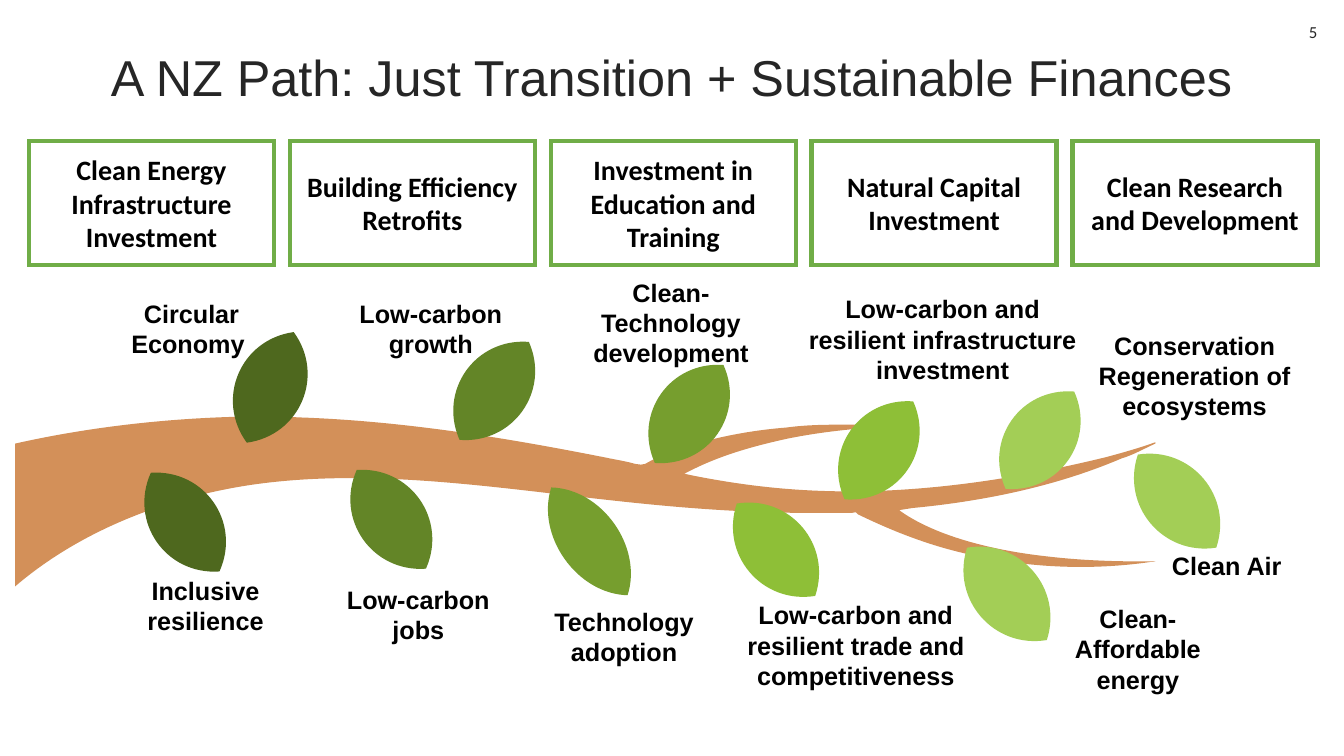
from math import hypot

from lxml import etree
from pptx import Presentation
from pptx.dml.color import RGBColor
from pptx.enum.shapes import MSO_SHAPE
from pptx.enum.text import MSO_ANCHOR, MSO_AUTO_SIZE, PP_ALIGN
from pptx.oxml.ns import qn
from pptx.util import Pt

RECT = MSO_SHAPE.RECTANGLE
MIDDLE = MSO_ANCHOR.MIDDLE
NO_FIT = MSO_AUTO_SIZE.NONE
CENTER, RIGHT = PP_ALIGN.CENTER, PP_ALIGN.RIGHT

WHITE = RGBColor(0xFF, 0xFF, 0xFF)
BLACK = RGBColor(0, 0, 0)
INK = RGBColor(0x26, 0x26, 0x26)
EDGE = RGBColor(0x70, 0xAD, 0x47)
BARK = RGBColor(0xD3, 0x90, 0x59)
DEEP = RGBColor(0x4E, 0x68, 0x1E)
MOSS = RGBColor(0x63, 0x85, 0x27)
FERN = RGBColor(0x76, 0x9E, 0x2E)
LIME = RGBColor(0x8E, 0xBF, 0x37)
PALE = RGBColor(0xA3, 0xCE, 0x56)

CARDS = [
    "Clean Energy Infrastructure Investment",
    "Building Efficiency Retrofits",
    "Investment in Education and Training",
    "Natural Capital Investment",
    "Clean Research and Development",
]

BRANCH = [
    (181, 0),
    (191, 0, 199, 0.7, 209, 1),
    (282, 4, 354, 16, 422, 29.5),
    (429, 31, 436, 32, 443, 34),
    (447, 34.5), (450, 34),
    (458, 29.5, 468, 25, 479.5, 21.5),
    (502.5, 14.5, 526, 10, 551, 8),
    (562, 6.5, 574, 6, 586, 6),
    (599, 6, 612, 6, 625, 6.5),
    (625, 7),
    (613, 8, 583, 9.5, 551.5, 16),
    (528.5, 21, 505, 27.5, 484, 38),
    (478, 41), (485, 42.5),
    (521, 49.5, 559.5, 54.5, 609, 53.5),
    (667.5, 52, 725, 42.5, 780, 29),
    (791, 26, 803.5, 22.5, 814.5, 18.5),
    (814.5, 19.5),
    (806.5, 23, 799, 27.5, 790.5, 30),
    (745, 49.5, 693.5, 60.5, 641, 65.5),
    (631.5, 67), (633.5, 68.5),
    (660, 86.5, 700.5, 96, 736.5, 100),
    (774.5, 104.5, 807, 103.5, 814.5, 103.5),
    (763, 111.5, 710, 107.5, 661.5, 93.5),
    (634.5, 85.5, 613.5, 75.5, 602, 70),
    (600.5, 68.5), (597.5, 69),
    (587.5, 69, 578, 69, 569, 69),
    (522, 69, 476, 65.5, 430.5, 60.5),
    (342, 51, 252, 36, 165, 49.5),
    (99.5, 60, 42, 85.5, 0, 121.5),
    (0, 19.5),
    (55.5, 7, 118, 0, 181, 0),
]

LEAVES = [
    ("Circular Economy ", (72, 5, 108, 49), (165.5, 111, 199, 32), 33, DEEP),
    ("Low-carbon growth", (226.5, 5, 141, 49), (317.5, 109, 367, 39), 33, MOSS),
    ("Clean-Technology development", (398, 0.5, 141, 49), (457, 125.5, 506, 55.5), 33, FERN),
    ("Low-carbon and resilient infrastructure investment",
     (551.5, 0, 222, 74), (592.5, 151.5, 641.5, 81.5), 33, LIME),
    ("Conservation Regeneration of ecosystems",
     (761.5, 38.5, 162, 49), (707.5, 144, 756.5, 74.5), 33, PALE),
    ("Inclusive resilience", (82, 203, 108, 49), (97, 132.5, 146, 203), 33, DEEP),
    ("Low-carbon jobs", (222.5, 209, 131, 49), (244, 130.5, 293.5, 201), 33, MOSS),
    ("Technology adoption", (372, 225, 126, 49), (383, 143, 437.5, 220), 29, FERN),
    ("Low-carbon and resilient trade and competitiveness",
     (506.5, 218, 188, 75), (515.5, 154.5, 571.5, 220.5), 33, LIME),
    ("Clean- Affordable energy",
     (738.5, 223, 127, 70.5), (680, 186, 737, 252), 33, PALE),
    ("Clean Air", (807, 173, 117, 52), (802, 119.5, 858, 186), 33, PALE),
]


def write(shape, text, font, size, color, bold=False, align=CENTER):
    """Fill a shape with one formatted, vertically centred paragraph."""
    frame = shape.text_frame
    frame.word_wrap = True
    frame.auto_size = NO_FIT
    frame.vertical_anchor = MIDDLE
    frame.text = text
    para = frame.paragraphs[0]
    para.alignment = align
    para.font.name = font
    para.font.size = Pt(size)
    para.font.bold = bold
    para.font.color.rgb = color
    return para


def label(slide, box, *style, **extra):
    """Add a text box."""
    return write(slide.shapes.add_textbox(*map(Pt, box)), *style, **extra)


def sample(steps):
    """Return points along the steps, which give the outline its frame."""
    last = steps[0]
    dots = [last]
    for step in steps[1:]:
        if len(step) == 6:
            one, two, end = step[:2], step[2:4], step[4:]
            for t in (0.2, 0.4, 0.6, 0.8):
                u = 1 - t
                dots.append(tuple(
                    u**3 * a + 3 * u * u * t * b + 3 * u * t * t * c + t**3 * d
                    for a, b, c, d in zip(last, one, two, end)))
        last = step[-2:]
        dots.append(last)
    return dots


def outline(slide, left, top, steps, color):
    """Draw a closed outline from points and cubic curves."""
    dots = [(Pt(left + x), Pt(top + y)) for x, y in sample(steps)]
    pen = slide.shapes.build_freeform(*dots[0], scale=1.0)
    pen.add_line_segments(dots[1:], close=True)
    shape = pen.convert_to_shape()
    track = next(shape.element.iter(qn("a:path")))
    for old in list(track):
        track.remove(old)
    for i, step in enumerate(steps):
        kind = "a:cubicBezTo" if len(step) == 6 else "a:lnTo" if i else "a:moveTo"
        part = etree.SubElement(track, qn(kind))
        for x, y in zip(step[::2], step[1::2]):
            dot = etree.SubElement(part, qn("a:pt"))
            dot.set("x", str(Pt(left + x) - shape.left))
            dot.set("y", str(Pt(top + y) - shape.top))
    etree.SubElement(track, qn("a:close"))
    shape.shadow.inherit = False
    shape.fill.solid()
    shape.fill.fore_color.rgb = color
    shape.line.fill.background()


def leaf(slide, left, top, tips, bulge, color):
    """Draw a leaf as two equal arcs between its tips."""
    ax, ay, bx, by = tips
    dx, dy = bx - ax, by - ay
    size = hypot(dx, dy)
    nx, ny = -dy / size * bulge, dx / size * bulge
    px, py = ax + 0.23 * dx, ay + 0.23 * dy
    qx, qy = bx - 0.23 * dx, by - 0.23 * dy
    steps = [
        (ax, ay),
        (px + nx, py + ny, qx + nx, qy + ny, bx, by),
        (qx - nx, qy - ny, px - nx, py - ny, ax, ay),
    ]
    outline(slide, left, top, steps, color)


def tree(slide, left, top):
    """Place the branch with its leaves and their labels."""
    outline(slide, left, top + 92.2, BRANCH, BARK)
    for text, box, tips, bulge, color in LEAVES:
        leaf(slide, left, top, tips, bulge, color)
        x, y, width, height = box
        label(slide, (left + x, top + y, width, height),
              text, "Arial", 18, BLACK, bold=True)


def cards(slide, left, top, width, height):
    """Place the row of investment cards."""
    gap = 11.3
    wide = (width - gap * (len(CARDS) - 1)) / len(CARDS)
    for i, text in enumerate(CARDS):
        x = left + i * (wide + gap)
        card = slide.shapes.add_shape(RECT, *map(Pt, (x, top, wide, height)))
        card.shadow.inherit = False
        card.fill.solid()
        card.fill.fore_color.rgb = WHITE
        tint = card.fill._xPr.find(qn("a:solidFill"))[0]
        etree.SubElement(tint, qn("a:alpha")).set("val", "70000")
        card.line.color.rgb = EDGE
        card.line.width = Pt(3)
        edge = card.element.spPr.find(qn("a:ln"))
        etree.SubElement(edge, qn("a:miter")).set("lim", "800000")
        write(card, text, "Calibri", 20, BLACK, bold=True)


def header(slide, left, top, width, height):
    """Place the title and the page number."""
    title = slide.shapes.title
    title.left, title.top, title.width, title.height = map(
        Pt, (left, top, width, height))
    para = write(title, "A NZ Path: Just Transition + Sustainable Finances",
                 "Arial", 36, INK)
    para.line_spacing = 0.9
    label(slide, (left + width - 106.8, top + 3, 95, 29),
          "5", "Calibri", 12, INK, align=RIGHT)


def main():
    """Build and save the slide."""
    deck = Presentation()
    deck.slide_width, deck.slide_height = Pt(960), Pt(540)
    slide = deck.slides.add_slide(deck.slide_layouts[5])
    tree(slide, 10.8, 205.2)
    cards(slide, 20.7, 100.7, 920.4, 88.6)
    header(slide, 0, 5, 960, 104.4)
    deck.save("out.pptx")


if __name__ == "__main__":
    main()
